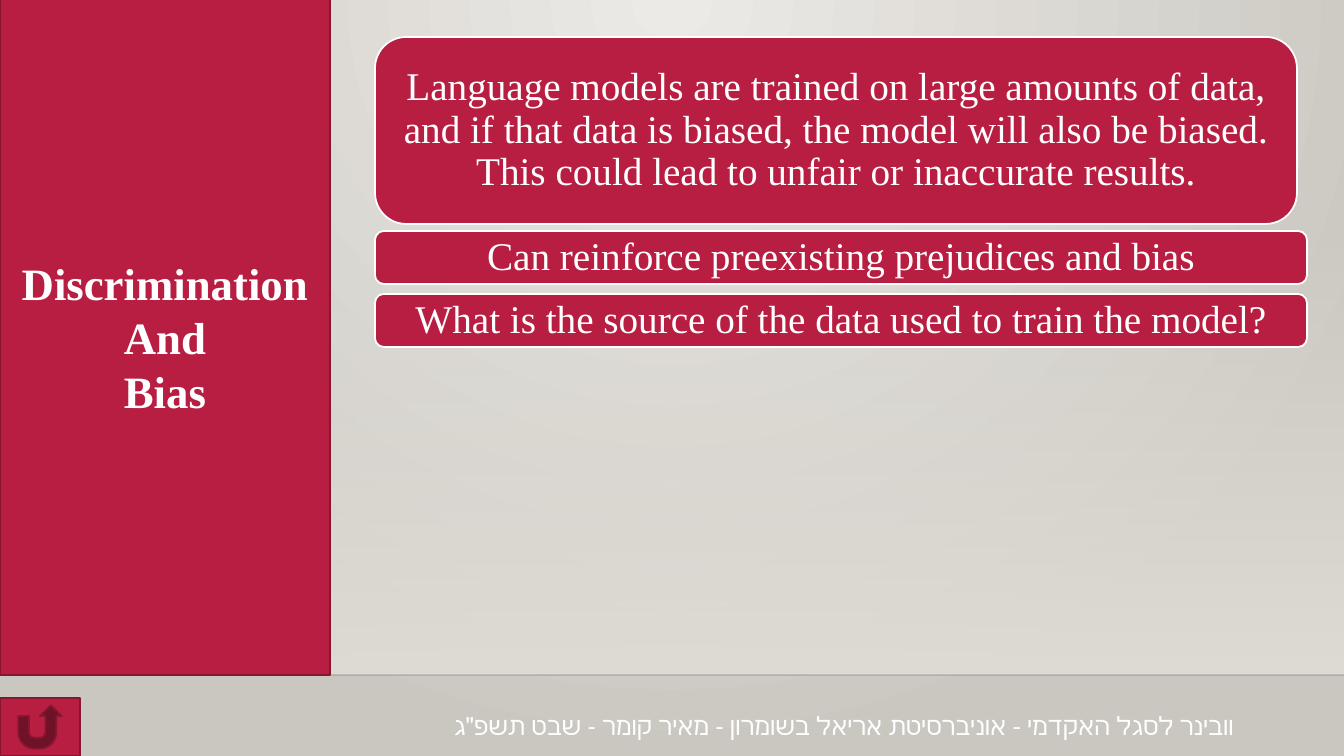
from lxml import etree
from pptx import Presentation
from pptx import util as u
from pptx.dml.color import RGBColor
from pptx.enum import shapes, text
from pptx.oxml.ns import qn

SCALE = 12192000 / 1344
RED, DARK, WHITE = "B71E42", "871631", "FFFFFF"
SERIF = "Times New Roman"
KIND = shapes.MSO_SHAPE

POINTS = [
    ("Language models are trained on large amounts of data, and if that data "
     "is biased, the model will also be biased. This could lead to unfair or "
     "inaccurate results.", (375, 37, 922, 187)),
    ("Can reinforce preexisting prejudices and bias", (375, 231, 932, 53)),
    ("What is the source of the data used to train the model?",
     (375, 294, 932, 53)),
]
FOOTER = 'וובינר לסגל האקדמי - אוניברסיטת אריאל בשומרון - מאיר קומר - שבט תשפ"ג'


def px(*nums):
    return [u.Emu(round(n * SCALE)) for n in nums]


def rgb(code):
    return RGBColor.from_string(code)


def sub(parent, tag, **attrs):
    return etree.SubElement(parent, qn(tag), attrs)


def assign(target, values):
    for name, value in values.items():
        setattr(target, name, value)


def blend(fill, codes):
    """Give a fill a two-stop gradient and return its stops."""
    fill.gradient()
    for stop, code in zip(fill.gradient_stops, codes):
        stop.color.rgb = rgb(code)
    return fill.gradient_stops


def backdrop(slide):
    """Radial glow from the top centre of the slide."""
    blend(slide.background.fill, ("ECEAE7", "CAC7C1"))
    grad = slide._element.find(".//" + qn("a:gradFill"))
    grad.remove(grad.find(qn("a:lin")))
    glow = sub(grad, "a:path", path="circle")
    sub(glow, "a:fillToRect", l="43000", t="0", r="43000", b="100000")


def veil(slide):
    """Wash that fades in downwards, closed by a thin rule."""
    wash = slide.shapes.add_shape(KIND.RECTANGLE, *px(0, 223, 1344, 452))
    wash.shadow.inherit = False
    wash.line.fill.background()
    blend(wash.fill, ("DFDBD5", "DFDBD5"))
    wash.fill.gradient_angle = 270
    first = wash._element.find(".//" + qn("a:gs"))
    sub(first[0], "a:alpha", val="0")

    rule = slide.shapes.add_connector(
        shapes.MSO_CONNECTOR.STRAIGHT, *px(0, 675, 1344, 675))
    assign(rule.line, {"width": u.Pt(1)})
    rule.line.color.rgb = rgb("000001")
    tint = rule._element.spPr.find(".//" + qn("a:srgbClr"))
    sub(tint, "a:alpha", val="20000")
    sub(rule._element.spPr, "a:effectLst")


def block(slide, kind, box, edge):
    shape = slide.shapes.add_shape(kind, *px(*box))
    shape.shadow.inherit = False
    shape.fill.solid()
    shape.fill.fore_color.rgb = rgb(RED)
    shape.line.color.rgb = rgb(edge)
    shape.line.width = u.Pt(1.25)
    return shape


def write(shape, lines, font, para, frame=None):
    """Fill a shape with one paragraph per line."""
    body = shape.text_frame
    middle = {"word_wrap": True, "vertical_anchor": text.MSO_ANCHOR.MIDDLE}
    assign(body, middle | (frame or {}))
    for i, line in enumerate(lines):
        item = body.add_paragraph() if i else body.paragraphs[0]
        assign(item, para)
        run = item.add_run()
        run.text = line
        assign(run.font, font)
        run.font.color.rgb = rgb(WHITE)


def main():
    deck = Presentation()
    deck.slide_width, deck.slide_height = px(1344, 756)
    slide = deck.slides.add_slide(deck.slide_layouts[6])
    backdrop(slide)
    veil(slide)

    mid = {"alignment": text.PP_ALIGN.CENTER}
    inset = {"margin_left": u.Inches(0.12), "margin_right": u.Inches(0.12),
             "margin_top": u.Inches(0.06), "margin_bottom": u.Inches(0.06)}
    for words, box in POINTS:
        card = block(slide, KIND.ROUNDED_RECTANGLE, box, WHITE)
        write(card, [words], {"name": SERIF, "size": u.Pt(28)},
              mid | {"line_spacing": 0.9}, inset)

    panel = block(slide, KIND.RECTANGLE, (0, -2, 330, 677), DARK)
    write(panel, ["Discrimination", "And", "Bias"],
          {"name": SERIF, "size": u.Pt(32), "bold": True}, mid)

    foot = slide.shapes.add_textbox(*px(444, 711, 883, 29))
    write(foot, [FOOTER], {"name": "Arial", "size": u.Pt(18)},
          {"alignment": text.PP_ALIGN.LEFT})

    block(slide, KIND.ACTION_BUTTON_RETURN, (0, 698, 80, 58), DARK)
    deck.save("out.pptx")


if __name__ == "__main__":
    main()
